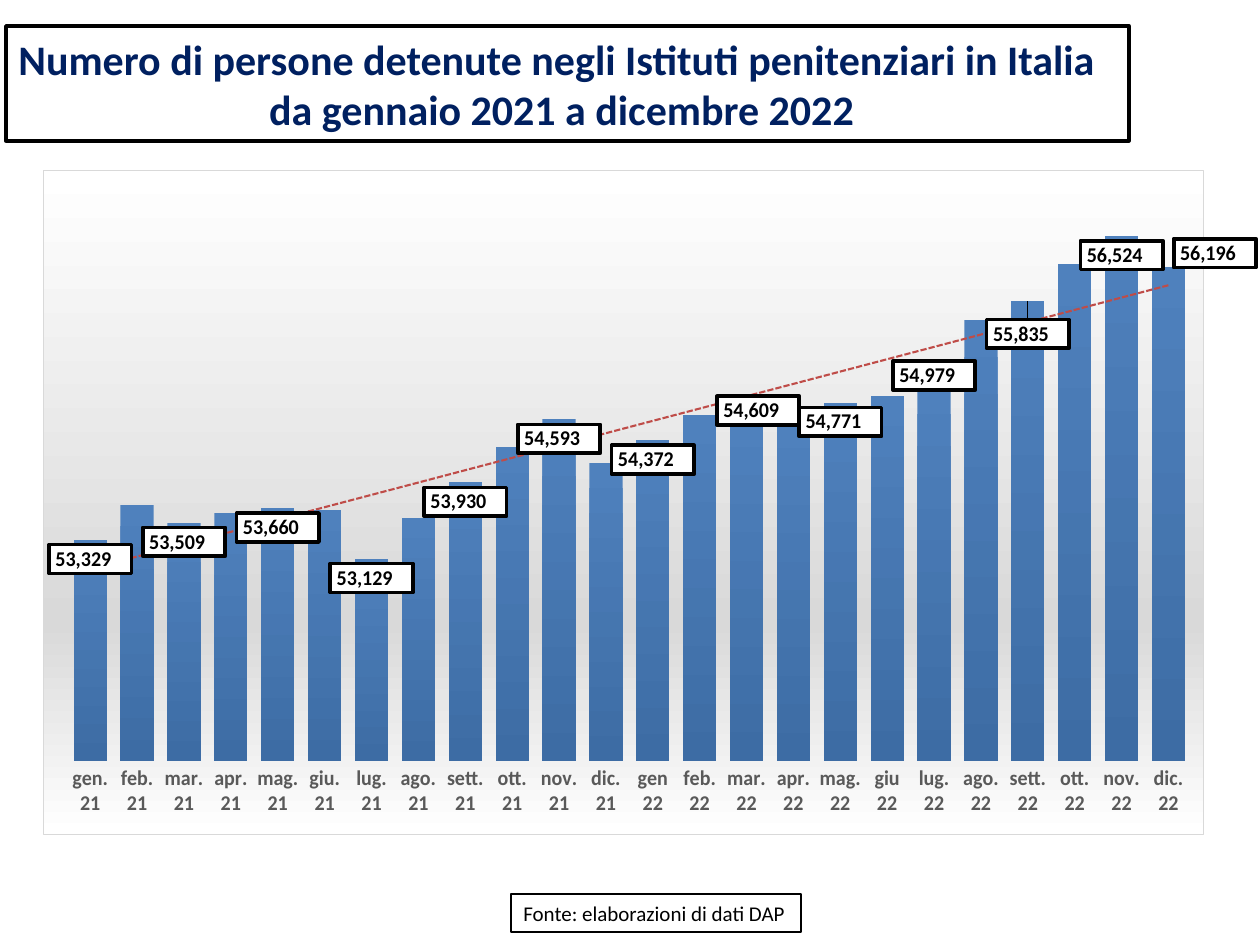
from copy import deepcopy

from lxml.etree import fromstring
from pptx import Presentation
from pptx.chart.data import CategoryChartData
from pptx.dml.color import RGBColor
from pptx.enum.chart import XL_CHART_TYPE as ChartType
from pptx.enum.chart import XL_LABEL_POSITION as LabelPos
from pptx.enum.chart import XL_TICK_MARK as TickMark
from pptx.enum.shapes import MSO_SHAPE as Shape
from pptx.enum.text import MSO_ANCHOR as Anchor
from pptx.enum.text import PP_ALIGN as Align
from pptx.oxml import parse_xml
from pptx.util import Pt

PX = 914400 // 126
FONT = "Calibri"
COLORS = {
    "white": "FFFFFF", "black": "000000", "title": "002060", "axis": "595959",
    "panel": "D9D9D9", "bar_top": "4F81BD", "bar_foot": "3D6CA4", "trend": "BF4C48",
}
NS = ('xmlns:c="http://schemas.openxmlformats.org/drawingml/2006/chart" '
      'xmlns:a="http://schemas.openxmlformats.org/drawingml/2006/main"')
NUMBER_FORMAT = r'_-* #,##0\ _€_-;\-* #,##0\ _€_-;_-* "-"?'

MONTHS_21 = "gen. feb. mar. apr. mag. giu. lug. ago. sett. ott. nov. dic.".split()
MONTHS_22 = "gen feb. mar. apr. mag. giu lug. ago. sett. ott. nov. dic.".split()
CATEGORIES = [f"{m} 21" for m in MONTHS_21] + [f"{m} 22" for m in MONTHS_22]
DETAINEES = [
    53329, 53697, 53509, 53608, 53660, 53637, 53129, 53557,
    53930, 54307, 54593, 54134, 54372, 54635, 54609, 54595,
    54771, 54841, 54979, 55637, 55835, 56225, 56524, 56196,
]
UNLABELLED = [1, 3, 5, 7, 9, 11, 13, 15, 17, 19, 21]
# Label offsets from the bar end, as fractions of the chart
LABEL_SHIFTS = {10: (0, 0), 14: (0.01, -0.04), 18: (0, -0.04),
                20: (0, 0.02), 23: (0.04, -0.05)}


def rgb(name):
    return RGBColor.from_string(COLORS[name])


def style_font(font, size, color="black", bold=False):
    font.name, font.size, font.bold = FONT, Pt(size), bold
    font.color.rgb = rgb(color)


def add_text_box(slide, box, lines, size, color="black", bold=False,
                 border=1, aligns=(Align.LEFT,), right_inset=12):
    shape = slide.shapes.add_shape(Shape.RECTANGLE, *(v * PX for v in box))
    shape.shadow.inherit = False
    shape.fill.solid()
    shape.fill.fore_color.rgb = rgb("white")
    shape.line.color.rgb = rgb("black")
    shape.line.width = Pt(border)
    frame = shape.text_frame
    frame.word_wrap = True
    frame.vertical_anchor = Anchor.MIDDLE
    frame.margin_right = right_inset * PX
    frame.margin_top = frame.margin_bottom = 0
    for i, (line, align) in enumerate(zip(lines, aligns)):
        paragraph = frame.paragraphs[0] if i == 0 else frame.add_paragraph()
        paragraph.text = line
        paragraph.alignment = align
        style_font(paragraph.font, size, color, bold)


def solid(color):
    return f'<a:solidFill><a:srgbClr val="{COLORS[color]}"/></a:solidFill>'


def gradient(*stops):
    """Vertical gradient from (percent, colour) pairs."""
    marks = "".join(f'<a:gs pos="{pos * 1000}"><a:srgbClr val="{COLORS[color]}"/></a:gs>'
                    for pos, color in stops)
    return f'<a:gradFill><a:gsLst>{marks}</a:gsLst><a:lin ang="5400000" scaled="0"/></a:gradFill>'


def outline(color, points, dash="solid"):
    return (f'<a:ln w="{int(points * 12700)}">{solid(color)}'
            f'<a:prstDash val="{dash}"/></a:ln>')


def chart_xml(tag, content):
    return parse_xml(f"<c:{tag} {NS}>{content}</c:{tag}>")


def manual_layout(**values):
    parts = "".join(f'<c:{key} val="{value}"/>' for key, value in values.items())
    return chart_xml("layout", f"<c:manualLayout>{parts}</c:manualLayout>")


def format_labels(series_xml, labels):
    labels.show_value = True
    labels.number_format = NUMBER_FORMAT
    labels.number_format_is_linked = False
    labels.position = LabelPos.INSIDE_END
    style_font(labels.font, 12, bold=True)
    group = series_xml.xpath("c:dLbls")[0]
    for leader in group.xpath("c:showLeaderLines"):
        group.remove(leader)
    group.xpath("c:numFmt")[0].addnext(
        chart_xml("spPr", solid("white") + outline("black", 2.25)))
    shared = list(group)
    for position, i in enumerate(sorted([*UNLABELLED, *LABEL_SHIFTS])):
        label = chart_xml("dLbl", f'<c:idx val="{i}"/>')
        if i in LABEL_SHIFTS:
            x, y = LABEL_SHIFTS[i]
            label.append(manual_layout(x=x, y=y))
            label.extend(deepcopy(part) for part in shared)
        else:
            label.append(parse_xml(f'<c:delete {NS} val="1"/>'))
        group.insert(position, label)


def add_detainee_chart(slide, box):
    data = CategoryChartData()
    data.categories = CATEGORIES
    data.add_series("Series 1", DETAINEES)
    chart = slide.shapes.add_chart(
        ChartType.COLUMN_CLUSTERED, *(v * PX for v in box), data).chart
    chart.has_legend = chart.has_title = False
    style_font(chart.font, 11)

    months, counts = chart.category_axis, chart.value_axis
    months.major_tick_mark = months.minor_tick_mark = TickMark.NONE
    months.format.line.fill.background()
    style_font(months.tick_labels.font, 12, "axis", True)
    counts.minimum_scale, counts.maximum_scale = 51000, 57000
    counts.has_major_gridlines = False
    counts.visible = False

    plot = chart.plots[0]
    plot.gap_width = 41
    plot.vary_by_categories = False
    bars = plot.series[0]
    bars.format.fill.gradient()
    bars.format.fill.gradient_angle = 270
    for stop, color in zip(bars.format.fill.gradient_stops, ("bar_top", "bar_foot")):
        stop.color.rgb = rgb(color)

    root = chart.element
    series_xml = root.xpath(".//c:ser")[0]
    format_labels(series_xml, bars.data_labels)
    series_xml.xpath("c:cat")[0].addprevious(chart_xml(
        "trendline",
        f'<c:spPr>{outline("trend", 1.25, "sysDash")}</c:spPr>'
        '<c:trendlineType val="linear"/><c:dispRSqr val="0"/><c:dispEq val="0"/>'))

    area = root.xpath(".//c:plotArea")[0]
    for old in area.xpath("c:layout"):
        area.remove(old)
    area.insert(0, manual_layout(layoutTarget="inner", xMode="edge", yMode="edge",
                                 x=0.02, y=0.03, w=0.97, h=0.86))
    root.xpath("c:chart")[0].addnext(chart_xml(
        "spPr", gradient((0, "white"), (68, "panel"), (100, "white"))
        + outline("panel", 0.75)))


def main():
    deck = Presentation()
    deck.slide_width, deck.slide_height = 1260 * PX, 945 * PX
    slide = deck.slides.add_slide(deck.slide_layouts[6])
    add_text_box(
        slide, (6, 26, 1123, 115),
        ["Numero di persone detenute negli Istituti penitenziari in Italia",
         "da gennaio 2021 a dicembre 2022"],
        24, "title", True, border=2, aligns=(Align.LEFT, Align.CENTER), right_inset=24)
    add_text_box(slide, (511, 894, 290, 38), ["Fonte: elaborazioni di dati DAP"],
                 12, border=0.75)
    add_detainee_chart(slide, (43, 170, 1215, 665))
    deck.save("out.pptx")


if __name__ == "__main__":
    main()
